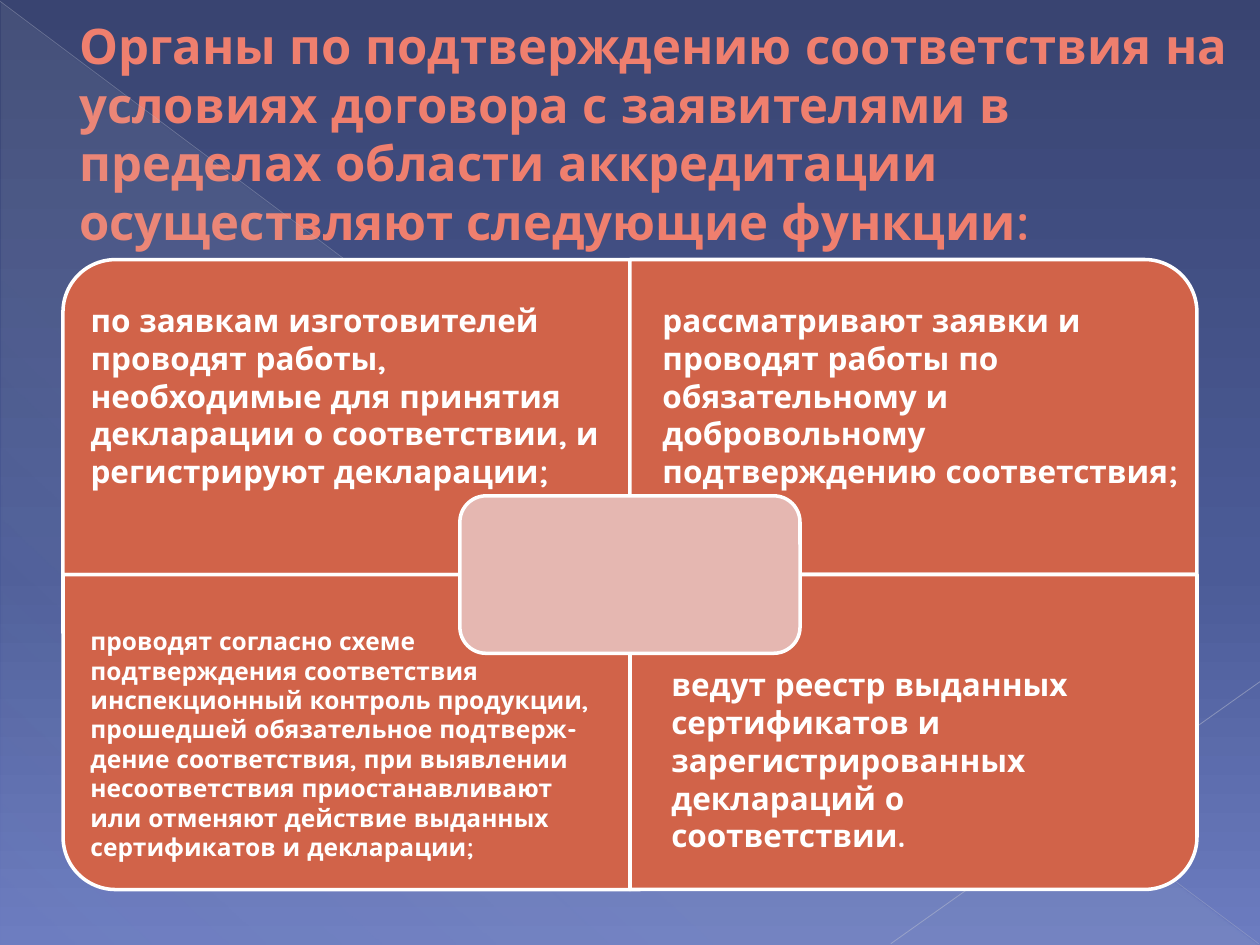
from dataclasses import dataclass

from lxml.etree import SubElement
from pptx import Presentation
from pptx.dml.color import RGBColor
from pptx.enum.dml import MSO_THEME_COLOR
from pptx.enum.shapes import MSO_CONNECTOR, MSO_SHAPE
from pptx.enum.text import MSO_ANCHOR, MSO_AUTO_SIZE, PP_ALIGN
from pptx.oxml.ns import qn
from pptx.util import Inches, Pt


@dataclass(frozen=True)
class Theme:
    font: str = "Quicksand"
    title: str = "EF7F6E"
    title_outline: str = "914533"
    text: str = "FFFFFF"
    quarter: str = "D16349"
    centre: str = "E5B7B1"
    border: str = "FFFFFF"
    # Gradient stops: position, colour, opacity in percent
    backdrop: tuple = ((0, "394471", 100), (60, "4B5B97", 100), (100, "6C7CC0", 100))
    glow: tuple = ((0, "C5D1D7", 10), (70, "C5D1D7", 8), (100, "C5D1D7", 1))
    title_size: int = 28
    body_size: int = 18
    small_size: int = 14


def add_colour(parent, colour, opacity=100):
    node = SubElement(parent, qn("a:srgbClr"), val=colour)
    if opacity < 100:
        SubElement(node, qn("a:alpha"), val=str(opacity * 1000))


def set_gradient(fill, owner, stops, angle):
    """Give the fill any number of stops and a clockwise angle."""
    fill.gradient()
    gradient = next(owner.iter(qn("a:gradFill")))
    stop_list = gradient.find(qn("a:gsLst"))
    for old in list(stop_list):
        stop_list.remove(old)
    for position, colour, opacity in stops:
        stop = SubElement(stop_list, qn("a:gs"), pos=str(position * 1000))
        add_colour(stop, colour, opacity)
    gradient.find(qn("a:lin")).set("ang", str(angle * 60000))


class SlideBuilder:
    def __init__(self, slide, theme):
        self.slide = slide
        self.theme = theme

    def background(self):
        background = self.slide.background
        set_gradient(background.fill, self.slide.element, self.theme.backdrop, 90)

    def glow(self, left, top, width, height):
        triangle = self.slide.shapes.add_shape(
            MSO_SHAPE.RIGHT_TRIANGLE,
            Inches(left), Inches(top), Inches(width), Inches(height))
        triangle.shadow.inherit = False
        triangle.line.fill.background()
        set_gradient(triangle.fill, triangle.element.spPr, self.theme.glow, 133)

    def ray(self, start, end, colour, weight, opacity):
        line = self.slide.shapes.add_connector(
            MSO_CONNECTOR.STRAIGHT, *map(Inches, start + end))
        line.line.width = Pt(weight)
        line.line.color.rgb = RGBColor.from_string(colour)
        properties = line.element.spPr
        SubElement(next(properties.iter(qn("a:srgbClr"))), qn("a:alpha"),
                   val=str(opacity * 1000))
        SubElement(properties, qn("a:effectLst"))

    def style(self, paragraph, size, colour):
        paragraph.alignment = PP_ALIGN.LEFT
        font = paragraph.font
        font.name = self.theme.font
        font.size = Pt(size)
        font.bold = True
        font.color.rgb = RGBColor.from_string(colour)

    def title(self, text, left, top, width, height):
        title = self.slide.shapes.title
        title.left, title.top = Inches(left), Inches(top)
        title.width, title.height = Inches(width), Inches(height)
        frame = title.text_frame
        frame.text = text
        frame.word_wrap = True
        frame.auto_size = MSO_AUTO_SIZE.NONE
        frame.vertical_anchor = MSO_ANCHOR.MIDDLE
        paragraph = frame.paragraphs[0]
        self.style(paragraph, self.theme.title_size, self.theme.title)
        properties = paragraph._p.get_or_add_pPr()
        properties.set("marL", str(Inches(0.53)))
        properties.set("indent", "0")
        character = properties.find(qn("a:defRPr"))
        outline = SubElement(character, qn("a:ln"), w=str(Pt(0.5)))
        add_colour(SubElement(outline, qn("a:solidFill")), self.theme.title_outline)
        character.insert(0, outline)

    def panel(self, group, kind, centre, size, colour, rotation=0):
        """Add a bordered shape by its centre and unrotated size."""
        (x, y), (width, height) = centre, size
        panel = group.shapes.add_shape(
            kind, Inches(x - width / 2), Inches(y - height / 2),
            Inches(width), Inches(height))
        panel.rotation = rotation
        panel.shadow.inherit = False
        panel.fill.solid()
        panel.fill.fore_color.rgb = RGBColor.from_string(colour)
        panel.line.color.rgb = RGBColor.from_string(self.theme.border)
        panel.line.width = Pt(2)

    def matrix(self, centre, width, height):
        """Four quarters, each with its round corner outward, and a middle tile."""
        group = self.slide.shapes.add_group_shape()
        x, y = centre
        quarters = ((-1, -1, 270), (1, -1, 0), (-1, 1, 180), (1, 1, 90))
        for across, down, rotation in quarters:
            size = (width, height) if rotation % 180 == 0 else (height, width)
            middle = (x + across * width / 2, y + down * height / 2)
            self.panel(group, MSO_SHAPE.ROUND_1_RECTANGLE, middle, size,
                       self.theme.quarter, rotation)
        self.panel(group, MSO_SHAPE.ROUNDED_RECTANGLE, centre,
                   (width * 0.6, height / 2), self.theme.centre)

    def caption(self, text, left, top, width, height, size):
        box = self.slide.shapes.add_textbox(
            Inches(left), Inches(top), Inches(width), Inches(height))
        frame = box.text_frame
        frame.word_wrap = True
        frame.auto_size = MSO_AUTO_SIZE.SHAPE_TO_FIT_TEXT
        frame.text = text
        self.style(frame.paragraphs[0], size, self.theme.text)


def main():
    theme = Theme()
    presentation = Presentation()
    presentation.slide_width, presentation.slide_height = Inches(10), Inches(7.5)
    slide = presentation.slides.add_slide(presentation.slide_layouts[5])
    builder = SlideBuilder(slide, theme)

    builder.background()
    builder.glow(0.01, 0.02, 9.98, 7.48)
    builder.ray((0, 0.01), (9.99, 7.49), "BABECD", 0.39, 35)
    builder.ray((10, 5.41), (7.07, 7.49), "C2C5D2", 0.47, 45)
    builder.title(
        "Органы по подтверждению соответствия на условиях договора с заявителями "
        "в пределах области аккредитации осуществляют следующие функции:",
        0, 0.29, 10, 1.53)
    builder.matrix((5, 4.56), 4.5, 2.5)

    captions = (
        ("рассматривают заявки и проводят работы по обязательному и добровольному "
         "подтверждению соответствия;",
         5.16, 2.34, 4.3, 1.62, theme.body_size),
        ("по заявкам изготовителей проводят работы, необходимые для принятия "
         "декларации о соответствии, и регистрируют декларации;",
         0.62, 2.34, 4.38, 1.62, theme.body_size),
        ("проводят согласно схеме подтверждения соответствия инспекционный контроль "
         "продукции, прошедшей обязательное подтверж-дение соответствия, при "
         "выявлении несоответствия приостанавливают или отменяют действие выданных "
         "сертификатов и декларации;",
         0.62, 4.92, 4.3, 1.99, theme.small_size),
        ("ведут реестр выданных сертификатов и зарегистрированных деклараций о "
         "соответствии.",
         5.23, 5.23, 3.75, 1.62, theme.body_size),
    )
    for caption in captions:
        builder.caption(*caption)

    presentation.save("out.pptx")


if __name__ == "__main__":
    main()
